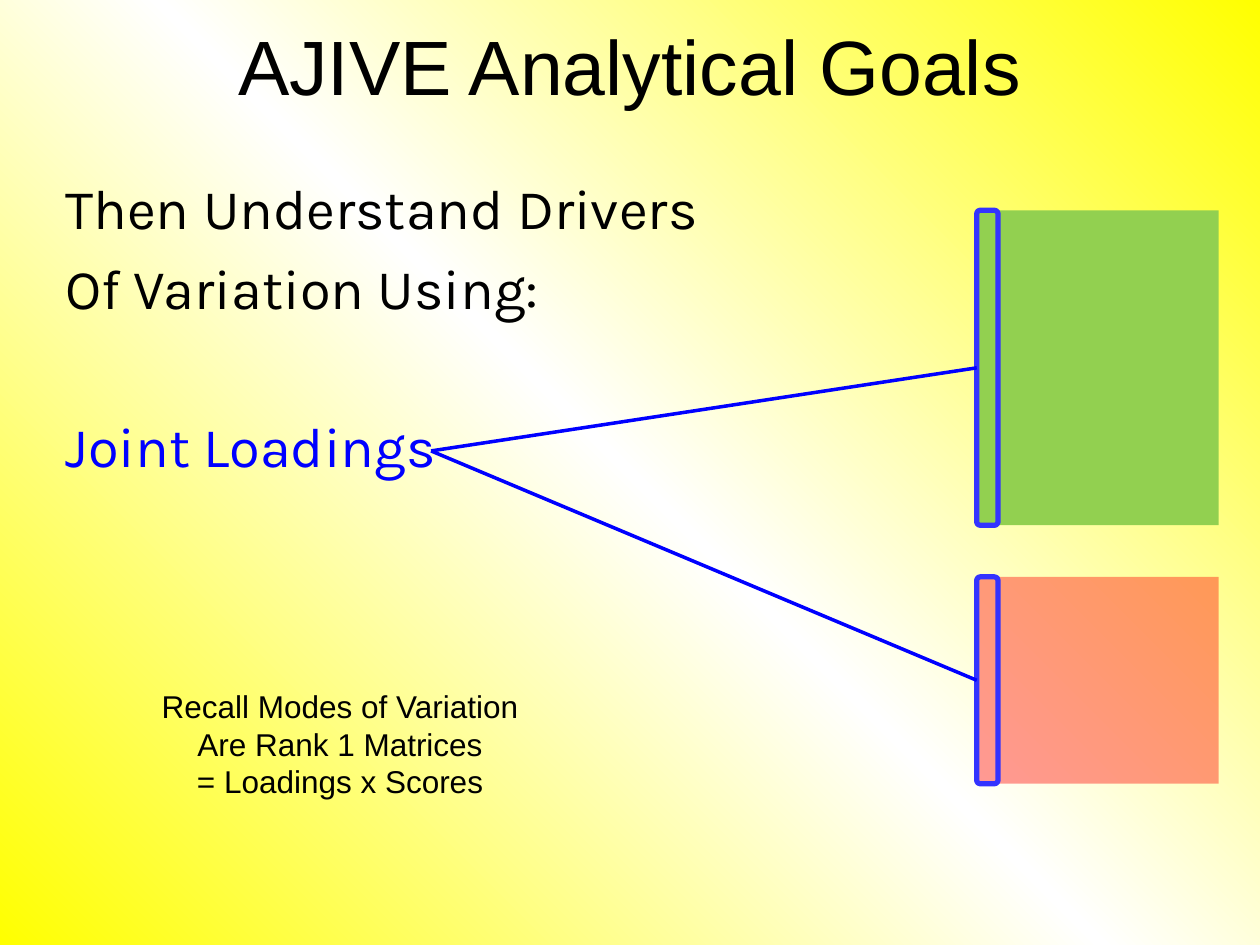
from copy import deepcopy

from pptx import Presentation
from pptx.dml.color import RGBColor
from pptx.enum.shapes import MSO_CONNECTOR as Link, MSO_SHAPE as Shape
from pptx.enum.text import MSO_ANCHOR as Anchor, MSO_AUTO_SIZE as AutoSize, PP_ALIGN as Align
from pptx.oxml.ns import qn
from pptx.util import Cm, Pt
from lxml.etree import SubElement

BLACK = RGBColor(0, 0, 0)
BLUE = RGBColor(0, 0, 255)
FRAME_BLUE = RGBColor(0x33, 0x33, 0xFF)
GREEN = RGBColor(0x92, 0xD0, 0x50)
RED = RGBColor(255, 0, 0)
YELLOW = RGBColor(255, 255, 0)
WHITE = RGBColor(255, 255, 255)

LOADING_WIDTH = 0.43


def paint_background(page):
    """Diagonal yellow, white, yellow gradient."""
    fill = page.background.fill
    fill.gradient()
    fill.gradient_angle = 225
    stop_list = page.element.find(".//" + qn("a:gsLst"))
    stop_list.append(deepcopy(stop_list[-1]))
    for stop, color, position in zip(fill.gradient_stops, (YELLOW, WHITE, YELLOW), (0, 0.5, 1)):
        stop.color.rgb = color
        stop.position = position


def format_para(para, font, size, color=BLACK, align=Align.LEFT):
    para.alignment = align
    for span in para.runs:
        span.font.name = font
        span.font.size = Pt(size)
        span.font.color.rgb = color


def add_title(page, left, top, width, height):
    title = page.shapes.title
    title.left, title.top, title.width, title.height = map(Cm, (left, top, width, height))
    title.text_frame.text = "AJIVE Analytical Goals"
    title.text_frame.vertical_anchor = Anchor.MIDDLE
    format_para(title.text_frame.paragraphs[0], "Arial", 44, align=Align.CENTER)


def add_body(page, left, top, width, height):
    frame = page.shapes.add_textbox(Cm(left), Cm(top), Cm(width), Cm(height)).text_frame
    frame.word_wrap = True
    lines = [
        ("Then Understand Drivers", BLACK, 7),
        ("Of Variation Using:", BLACK, 7),
        ("Joint Loadings", BLUE, 52),
    ]
    frame.text = "\n".join(text for text, _, _ in lines)
    for para, (_, color, space) in zip(frame.paragraphs, lines):
        format_para(para, "Karla", 32, color)
        para.space_before = Pt(space)


def add_matrix(page, left, top, width, height, color, opacity=None):
    """Filled matrix block; an opacity in percent makes it see-through."""
    block = page.shapes.add_shape(Shape.RECTANGLE, Cm(left), Cm(top), Cm(width), Cm(height))
    block.shadow.inherit = False
    block.fill.solid()
    block.fill.fore_color.rgb = color
    block.line.fill.background()
    if opacity is not None:
        tint = block.element.spPr.find(".//" + qn("a:srgbClr"))
        SubElement(tint, qn("a:alpha")).set("val", str(opacity * 1000))


def add_loading(page, left, top, height):
    """Outlined first column of a matrix."""
    column = page.shapes.add_shape(
        Shape.ROUNDED_RECTANGLE, Cm(left), Cm(top), Cm(LOADING_WIDTH), Cm(height))
    column.shadow.inherit = False
    column.fill.background()
    column.line.color.rgb = FRAME_BLUE
    column.line.width = Pt(3)
    return column


def add_pointer(page, column, x, y):
    """Line from the left side of a loading column to its label."""
    pointer = page.shapes.add_connector(Link.STRAIGHT, column.left, column.top, Cm(x), Cm(y))
    pointer.begin_connect(column, 1)
    pointer.line.color.rgb = BLUE
    pointer.line.width = Pt(2)
    SubElement(pointer.element.spPr, qn("a:effectLst"))


def add_matrices(page, left, top, width):
    green_height, red_top, red_height = 6.35, top + 7.39, 4.17
    add_matrix(page, left, top, width, green_height, GREEN)
    add_matrix(page, left, red_top, width, red_height, RED, opacity=40)
    columns = [
        add_loading(page, left, top, green_height),
        add_loading(page, left, red_top, red_height),
    ]
    for column in columns:
        add_pointer(page, column, left - 11, top + 4.85)


def add_note(page, left, top, width, height):
    frame = page.shapes.add_textbox(Cm(left), Cm(top), Cm(width), Cm(height)).text_frame
    frame.word_wrap = False
    frame.auto_size = AutoSize.SHAPE_TO_FIT_TEXT
    frame.text = "Recall Modes of Variation\nAre Rank 1 Matrices\n= Loadings x Scores"
    for para in frame.paragraphs:
        format_para(para, "Arial", 18, align=Align.CENTER)


def main():
    deck = Presentation()
    deck.slide_width, deck.slide_height = Cm(25.4), Cm(19.05)
    page = deck.slides.add_slide(deck.slide_layouts[5])
    paint_background(page)
    add_title(page, 1.27, 0, 22.86, 2.62)
    add_body(page, 1.07, 3.38, 23.7, 14.6)
    add_matrices(page, 19.69, 4.24, 4.88)
    add_note(page, 2.97, 13.72, 7.77, 2.57)
    deck.save("out.pptx")


if __name__ == "__main__":
    main()
